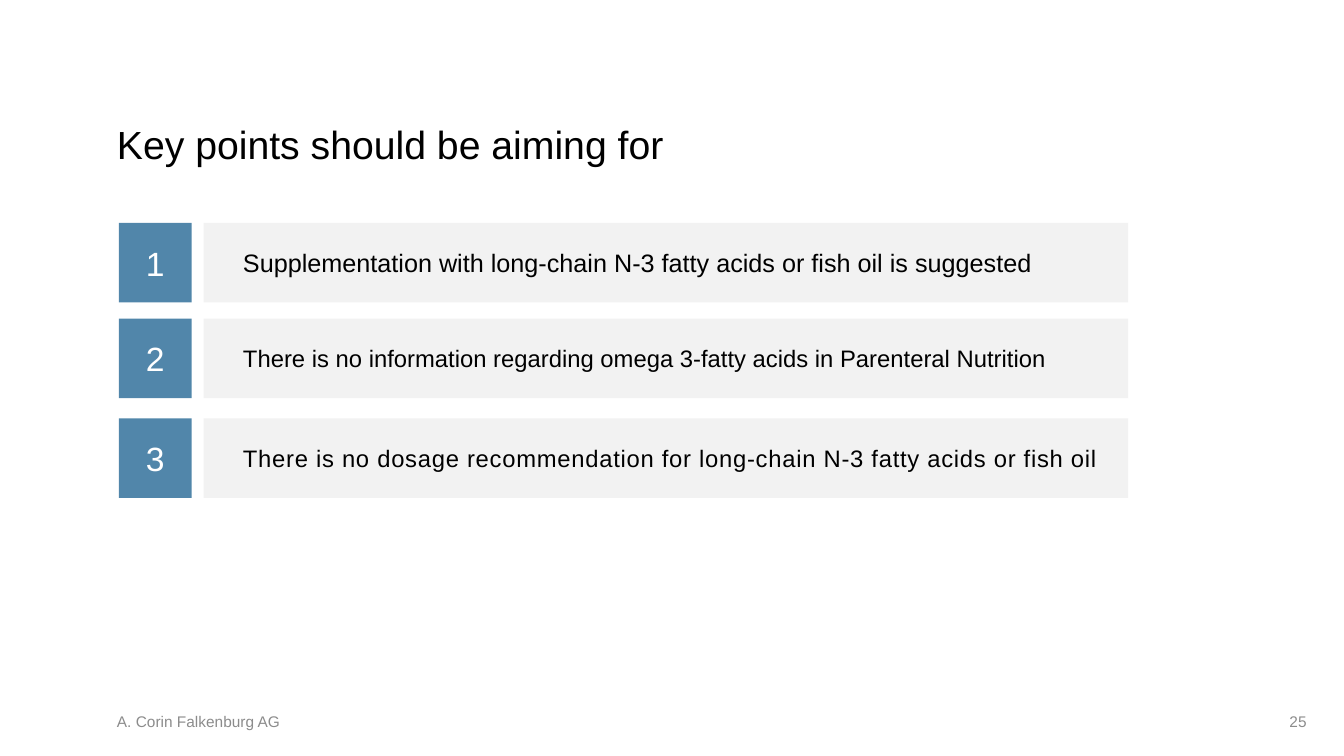
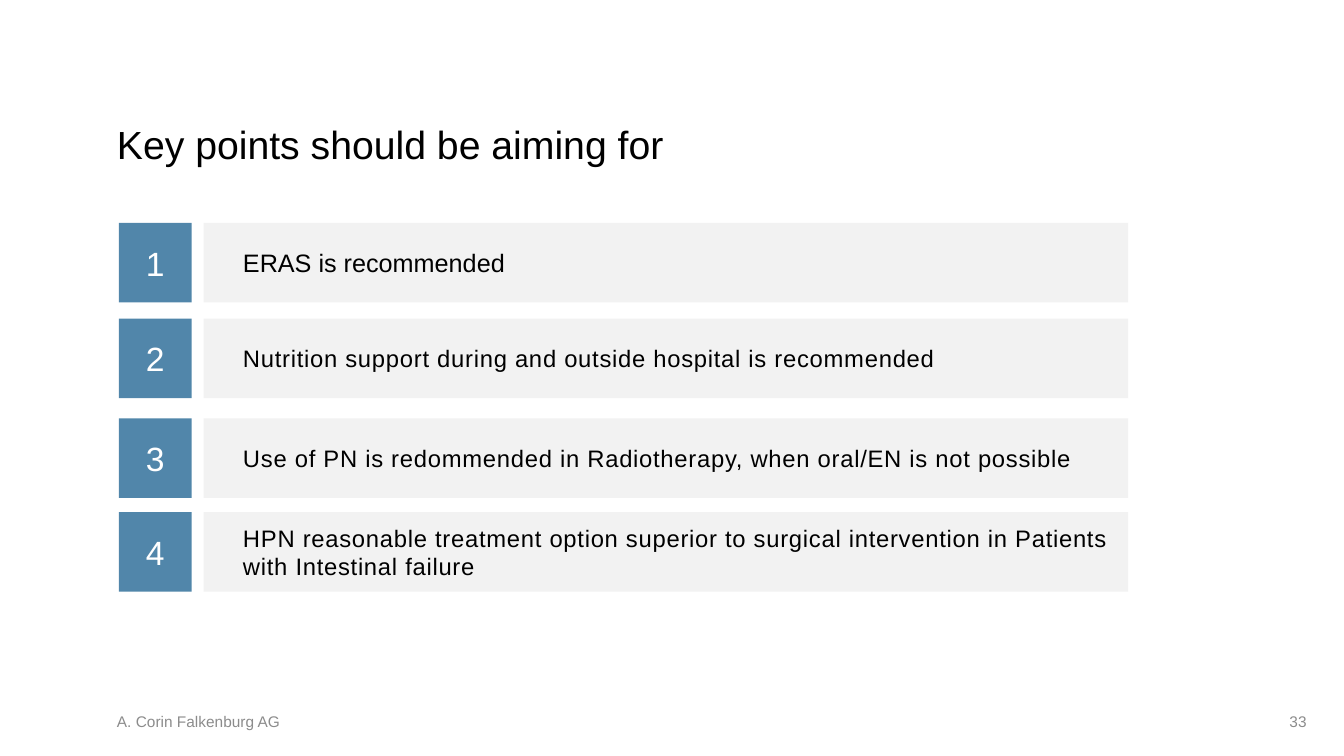
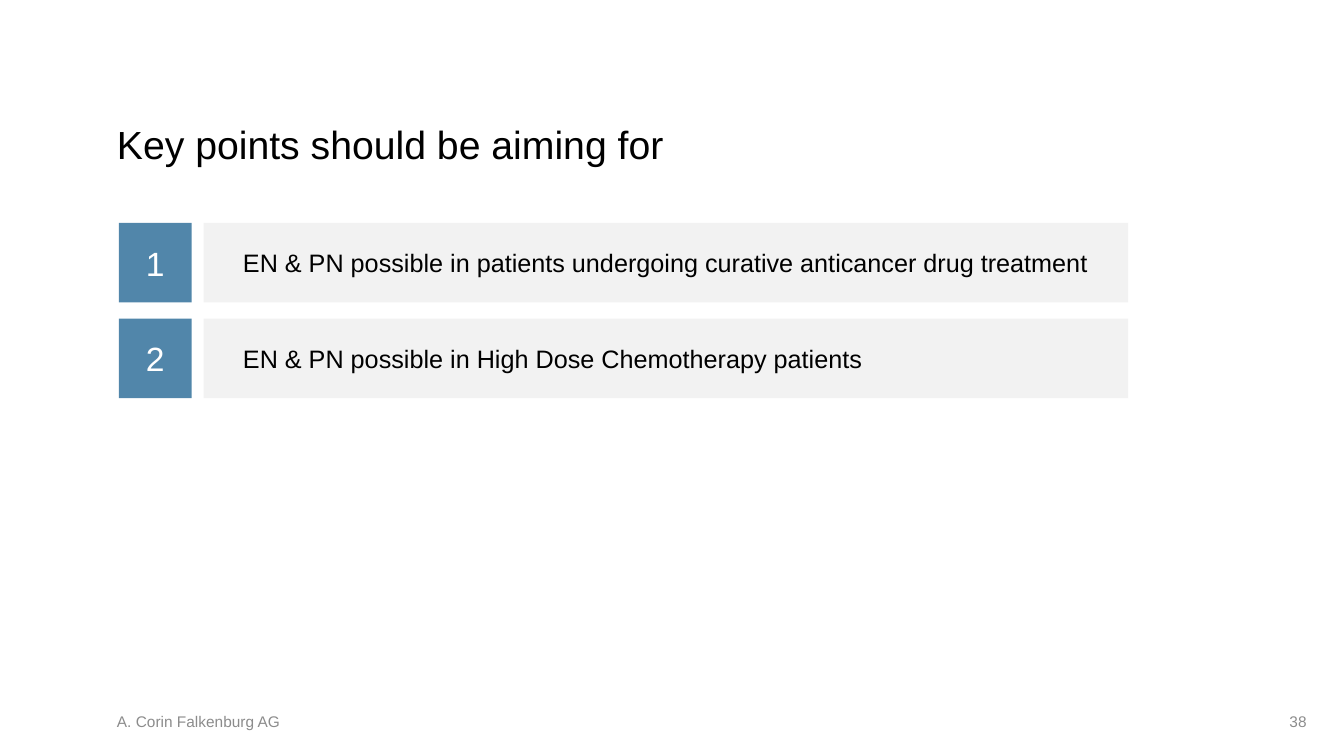
"""Build three slides of numbered key points."""
from pptx import Presentation
from pptx.dml.color import RGBColor
from pptx.enum.shapes import MSO_SHAPE
from pptx.enum.text import MSO_ANCHOR, MSO_AUTO_SIZE, PP_ALIGN
from pptx.util import Inches, Pt

RECT = MSO_SHAPE.RECTANGLE
MIDDLE, BOTTOM = MSO_ANCHOR.MIDDLE, MSO_ANCHOR.BOTTOM
LEFT, CENTER, RIGHT = PP_ALIGN.LEFT, PP_ALIGN.CENTER, PP_ALIGN.RIGHT
FIXED = MSO_AUTO_SIZE.NONE
TITLE = "Key points should be aiming for"
OWNER = "A. Corin Falkenburg AG"
TOPS = (2.21, 3.16, 4.15, 5.08)
TIGHT, WIDE = 0, 0.5

DECK = [
    (25, [
        ("Supplementation with long-chain N-3 fatty acids or fish oil is suggested", 18, TIGHT),
        ("There is no information regarding omega 3-fatty acids in Parenteral Nutrition", 17, TIGHT),
        ("There is no dosage recommendation for long-chain N-3 fatty acids or fish oil", 17, WIDE),
    ]),
    (33, [
        ("ERAS is recommended", 18, TIGHT),
        ("Nutrition support during and outside hospital is recommended", 17, WIDE),
        ("Use of PN is redommended in Radiotherapy, when oral/EN is not possible", 17, WIDE),
        ("HPN reasonable treatment option superior to surgical intervention in Patients\n"
         "with Intestinal failure", 17, WIDE),
    ]),
    (38, [
        ("EN & PN possible in patients undergoing curative anticancer drug treatment", 18, TIGHT),
        ("EN & PN possible in High Dose Chemotherapy patients", 18, TIGHT),
    ]),
]


class Deck:
    font = "Arial"
    hues = {"ink": "000000", "blue": "5186AA", "pale": "F2F2F2",
            "gray": "8C8C8C", "white": "FFFFFF"}

    def __init__(self):
        self.prs = Presentation()
        self.prs.slide_width = Inches(13.33)
        self.prs.slide_height = Inches(7.5)
        self.slide = None

    def hue(self, name):
        return RGBColor.from_string(self.hues[name])

    def start(self, number):
        self.slide = self.prs.slides.add_slide(self.prs.slide_layouts[5])
        self.title(TITLE)
        self.note(OWNER, 1.04, 4.09, LEFT)
        self.note(str(number), 9.97, 3.11, RIGHT)

    def label(self, shape, text, size, hue, align=LEFT, anchor=MIDDLE,
              inset=(0.1, 0.05, 0.1, 0.05), space=TIGHT):
        frame = shape.text_frame
        frame.word_wrap = True
        frame.auto_size = FIXED
        frame.vertical_anchor = anchor
        (frame.margin_left, frame.margin_top,
         frame.margin_right, frame.margin_bottom) = map(Inches, inset)
        para = frame.paragraphs[0]
        para.alignment = align
        for row, line in enumerate(text.split("\n")):
            if row:
                para.add_line_break()
            run = para.add_run()
            run.text = line
            run.font.name = self.font
            run.font.size = Pt(size)
            run.font.color.rgb = self.hue(hue)
            if space:
                run._r.get_or_add_rPr().set("spc", str(int(space * 100)))

    def title(self, text):
        shape = self.slide.shapes.title
        shape.left, shape.top = Inches(1.16), Inches(0.72)
        shape.width, shape.height = Inches(11.81), Inches(0.94)
        self.label(shape, text, 28, "ink", anchor=BOTTOM, inset=(0, 0, 0, 0))

    def note(self, text, left, width, align):
        box = self.slide.shapes.add_textbox(
            Inches(left), Inches(6.98), Inches(width), Inches(0.35))
        self.label(box, text, 11, "gray", align, inset=(0.12, 0, 0.12, 0))

    def block(self, left, top, width, fill):
        shape = self.slide.shapes.add_shape(
            RECT, Inches(left), Inches(top), Inches(width), Inches(0.79))
        shape.shadow.inherit = False
        shape.fill.solid()
        shape.fill.fore_color.rgb = self.hue(fill)
        shape.line.fill.background()
        return shape

    def point(self, number, top, text, size, space):
        bar = self.block(2.02, top, 9.17, "pale")
        self.label(bar, text, size, "ink", inset=(0.39, 0.05, 0.1, 0.05), space=space)
        badge = self.block(1.18, top, 0.72, "blue")
        self.label(badge, str(number), 24, "white", CENTER)


def main():
    deck = Deck()
    for page, points in DECK:
        deck.start(page)
        for number, (top, point) in enumerate(zip(TOPS, points), 1):
            deck.point(number, top, *point)
    deck.prs.save("out.pptx")


if __name__ == "__main__":
    main()
